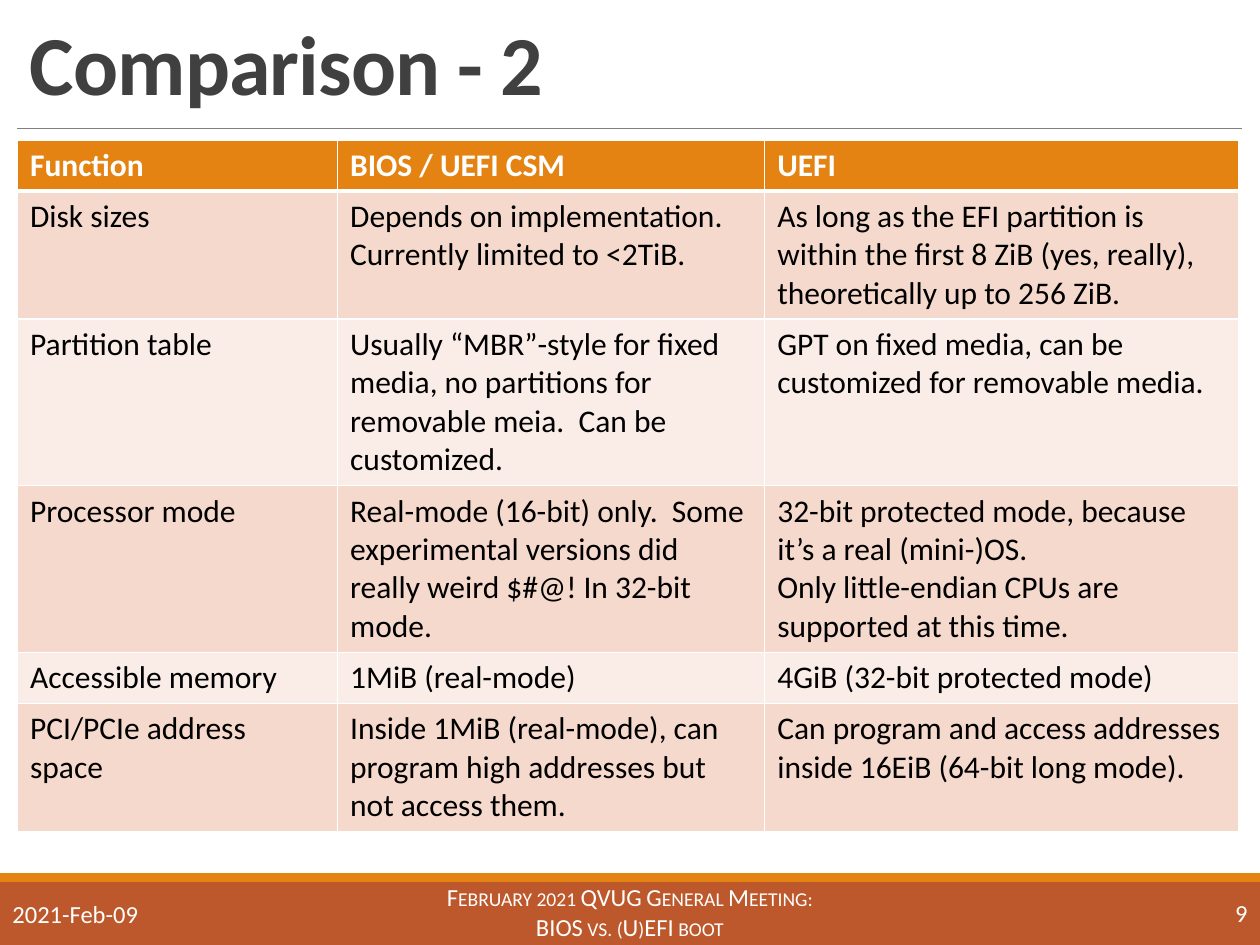
import pptx
import pptx.dml.color
import pptx.enum.shapes
import pptx.enum.text
import pptx.oxml.ns
import pptx.util
from lxml import etree

Pt = pptx.util.Pt
ALIGN = pptx.enum.text.PP_ALIGN
ANCHOR = pptx.enum.text.MSO_ANCHOR
qn = pptx.oxml.ns.qn

FONT = "Calibri"
WHITE, BLACK, GREY = "FFFFFF", "000000", "404040"
ORANGE, RUST = "E48312", "BD582C"
BANDS = ["F5D9CC", "FAEDE7"]

COLUMN_WIDTHS = [182.9, 244.1, 270.7]
LINE_HEIGHT, CELL_PADDING = 22, 7.2
ROW_LINES = [1, 3, 4, 4, 1, 3]
COMPARISON = [
    ["Function", "BIOS / UEFI CSM", "UEFI"],
    ["Disk sizes",
     "Depends on implementation.  Currently limited to <2TiB.",
     "As long as the EFI partition is within the first 8 ZiB (yes, really), "
     "theoretically up to 256 ZiB."],
    ["Partition table",
     "Usually “MBR”-style for fixed media, no partitions for removable meia.  "
     "Can be customized.",
     "GPT on fixed media, can be customized for removable media."],
    ["Processor mode",
     "Real-mode (16-bit) only.  Some experimental versions did really weird "
     "$#@! In 32-bit mode.",
     "32-bit protected mode, because it’s a real (mini-)OS.\n"
     "Only little-endian CPUs are supported at this time."],
    ["Accessible memory", "1MiB (real-mode)", "4GiB (32-bit protected mode)"],
    ["PCI/PCIe address space",
     "Inside 1MiB (real-mode), can program high addresses but not access them.",
     "Can program and access addresses inside 16EiB (64-bit long mode)."],
]


def rgb(color):
    return pptx.dml.color.RGBColor.from_string(color)


def write(frame, text, size, color, bold=False, align=ALIGN.LEFT,
          line_spacing=None, small_caps=False, tracking=None):
    """Fill a text frame; \\n starts a paragraph and \\v breaks a line."""
    frame.text = text
    frame.word_wrap = True
    for paragraph in frame.paragraphs:
        paragraph.alignment = align
        paragraph.line_spacing = line_spacing
        for run in paragraph.runs:
            run.font.name = FONT
            run.font.size = Pt(size)
            run.font.bold = bold
            run.font.color.rgb = rgb(color)
            properties = run._r.get_or_add_rPr()
            if small_caps:
                properties.set("cap", "small")
            if tracking is not None:
                properties.set("spc", str(round(tracking * 100)))


def add_text(slide, left, top, width, height, text, anchor=ANCHOR.MIDDLE, **style):
    box = slide.shapes.add_textbox(Pt(left), Pt(top), Pt(width), Pt(height))
    box.text_frame.vertical_anchor = anchor
    write(box.text_frame, text, **style)


def add_band(slide, top, height, color):
    band = slide.shapes.add_shape(
        pptx.enum.shapes.MSO_SHAPE.RECTANGLE, 0, Pt(top), Pt(720), Pt(height))
    band.shadow.inherit = False
    band.fill.solid()
    band.fill.fore_color.rgb = rgb(color)
    band.line.fill.background()


def add_rule(slide, left, right, y, color, width):
    rule = slide.shapes.add_connector(
        pptx.enum.shapes.MSO_CONNECTOR.STRAIGHT, Pt(left), Pt(y), Pt(right), Pt(y))
    rule.line.color.rgb = rgb(color)
    rule.line.width = Pt(width)
    etree.SubElement(rule._element.spPr, qn("a:effectLst"))


def add_borders(cell, color, **widths):
    """Draw cell borders; widths are keyed by side: L, R, T, B."""
    properties = cell._tc.get_or_add_tcPr()
    for side, width in widths.items():
        border = etree.SubElement(properties, qn(f"a:ln{side}"), w=str(Pt(width)))
        fill = etree.SubElement(border, qn("a:solidFill"))
        etree.SubElement(fill, qn("a:srgbClr"), val=color)


def add_comparison(slide, left, top):
    heights = [lines * LINE_HEIGHT + CELL_PADDING for lines in ROW_LINES]
    table = slide.shapes.add_table(
        len(COMPARISON), len(COLUMN_WIDTHS), Pt(left), Pt(top),
        Pt(sum(COLUMN_WIDTHS)), Pt(sum(heights))).table
    for column, width in zip(table.columns, COLUMN_WIDTHS):
        column.width = Pt(width)
    for r, (texts, height) in enumerate(zip(COMPARISON, heights)):
        table.rows[r].height = Pt(height)
        header = r == 0
        for c, text in enumerate(texts):
            cell = table.cell(r, c)
            add_borders(cell, WHITE, L=1, R=1, T=3 if r == 1 else 1,
                        B=3 if header else 1)
            cell.fill.solid()
            cell.fill.fore_color.rgb = rgb(ORANGE if header else BANDS[(r - 1) % 2])
            write(cell.text_frame, text, size=18, bold=header,
                  color=WHITE if header else BLACK)


def add_footer(slide):
    style = {"size": 14, "color": WHITE}
    add_text(slide, 0, 507.6, 146, 28.8, "2021-Feb-09", **style)
    add_text(slide, 217.4, 504, 285.1, 33.8,
             "February 2021 QVUG General Meeting:\vBIOS vs. (U)EFI boot",
             align=ALIGN.CENTER, small_caps=True, **style)
    add_text(slide, 642.2, 506.9, 77.8, 28.8, "9", align=ALIGN.RIGHT, **style)


def main():
    deck = pptx.Presentation()
    deck.slide_width, deck.slide_height = Pt(720), Pt(540)
    slide = deck.slides.add_slide(deck.slide_layouts[6])
    add_band(slide, 504, 36, RUST)
    add_band(slide, 499, 5, ORANGE)
    add_rule(slide, 10, 710, 73.4, "808080", 0.5)
    add_text(slide, 10, 0, 698.4, 67.7, "Comparison - 2", anchor=ANCHOR.BOTTOM,
             size=48, color=GREY, bold=True, line_spacing=0.85, tracking=-0.5)
    add_comparison(slide, 10, 80)
    add_footer(slide)
    deck.save("out.pptx")


if __name__ == "__main__":
    main()
